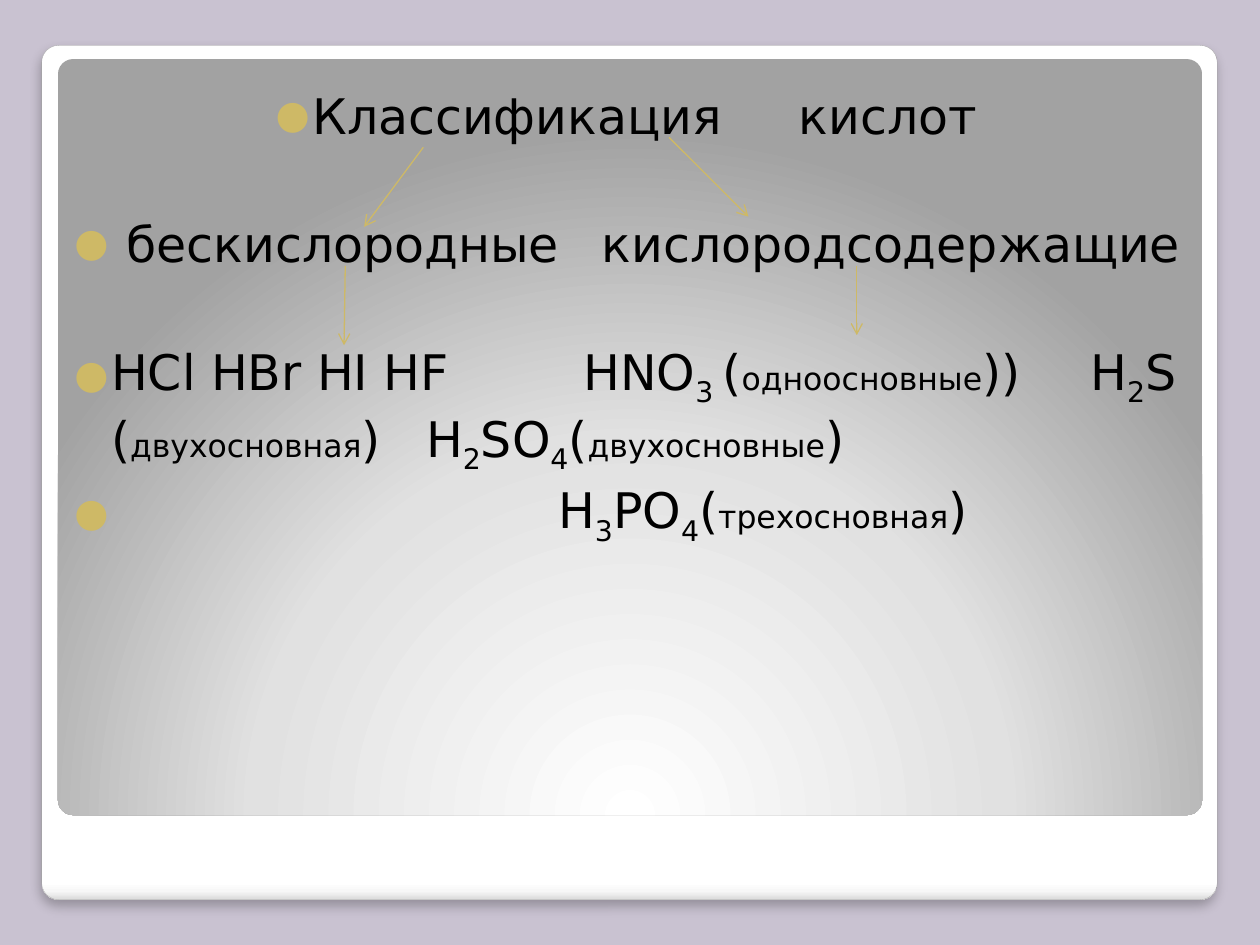
from dataclasses import dataclass

import pptx
import pptx.dml.color
import pptx.enum.shapes
import pptx.enum.text
import pptx.oxml
import pptx.oxml.ns
import pptx.util

Pt = pptx.util.Pt
COLORS = {"back": "C9C2D1", "edge": "A4A4A4", "shadow": "000000", "text": "000000", "accent": "CEB966"}
FONT = "DejaVu Sans"
NS = pptx.oxml.ns.nsdecls("a")
HANG = 21
BODY, SMALL = 28, 18


@dataclass
class Span:
    text: str
    size: int = BODY
    sub: bool = False


@dataclass
class Line:
    spans: list[Span]
    before: float
    left: float = HANG
    hang: float = HANG
    tabs: tuple[float, ...] = ()
    bullet: bool = True


@dataclass
class Panel:
    left: float
    top: float
    width: float
    height: float
    stops: list[tuple[int, str]]
    direction: str


@dataclass
class Arrow:
    x1: float
    y1: float
    x2: float
    y2: float


def sub(digit: str) -> Span:
    """Return a subscript span."""
    return Span(digit, sub=True)


def small(word: str) -> Span:
    """Return a span in the smaller size."""
    return Span(word, SMALL)


def rgb(name: str) -> pptx.dml.color.RGBColor:
    """Look up a named colour."""
    return pptx.dml.color.RGBColor.from_string(COLORS[name])


def add_xml(parent, xml: str) -> None:
    """Append one DrawingML element to a parent."""
    tag, rest = xml.split(" ", 1) if " " in xml.split(">", 1)[0] else (xml.split(">", 1)[0], None)
    name = tag.rstrip("/")
    tail = xml[len(name):]
    parent.append(pptx.oxml.parse_xml(f"{name} {NS}{tail}"))


def draw_panel(s, panel: Panel):
    """Draw a rounded panel with a gradient fill."""
    sp = s.shapes.add_shape(
        pptx.enum.shapes.MSO_SHAPE.ROUNDED_RECTANGLE,
        Pt(panel.left), Pt(panel.top), Pt(panel.width), Pt(panel.height))
    sp.adjustments[0] = 0.02
    sp.line.fill.background()
    stops = "".join(f'<a:gs pos="{pos * 1000}"><a:srgbClr val="{color}"/></a:gs>' for pos, color in panel.stops)
    add_xml(sp._element.spPr, f"<a:gradFill><a:gsLst>{stops}</a:gsLst>{panel.direction}</a:gradFill>")
    grad = sp._element.spPr[-1]
    sp._element.spPr.find(pptx.oxml.ns.qn("a:prstGeom")).addnext(grad)
    sp.shadow.inherit = False
    return sp


def draw_arrow(s, arrow: Arrow) -> None:
    """Draw a thin accent line with an open arrowhead."""
    c = s.shapes.add_connector(
        pptx.enum.shapes.MSO_CONNECTOR.STRAIGHT,
        Pt(arrow.x1), Pt(arrow.y1), Pt(arrow.x2), Pt(arrow.y2))
    c.line.color.rgb = rgb("accent")
    c.line.width = Pt(0.75)
    add_xml(c.line._get_or_add_ln(), '<a:tailEnd type="arrow"/>')
    add_xml(c._element.spPr, "<a:effectLst/>")


def write_line(p, line: Line) -> None:
    """Fill one paragraph with its spans, bullet and tab stops."""
    p.space_before = Pt(line.before)
    pPr = p._p.get_or_add_pPr()
    pPr.set("marL", str(Pt(line.left)))
    pPr.set("indent", str(-Pt(line.hang)))
    if line.bullet:
        add_xml(pPr, f'<a:buClr><a:srgbClr val="{COLORS["accent"]}"/></a:buClr>')
        add_xml(pPr, '<a:buSzPct val="80000"/>')
        add_xml(pPr, f'<a:buFont typeface="{FONT}"/>')
        add_xml(pPr, '<a:buChar char="●"/>')
    else:
        add_xml(pPr, "<a:buNone/>")
    if line.tabs:
        stops = "".join(f'<a:tab pos="{Pt(tab)}" algn="l"/>' for tab in line.tabs)
        add_xml(pPr, f"<a:tabLst>{stops}</a:tabLst>")
    for span in line.spans:
        r = p.add_run()
        r.text = span.text
        r.font.name = FONT
        r.font.size = Pt(span.size)
        r.font.color.rgb = rgb("text")
        if span.sub:
            r._r.get_or_add_rPr().set("baseline", "-25000")


def draw_body(s, lines: list[Line]) -> None:
    """Draw the text of the slide."""
    sp = s.shapes.add_textbox(Pt(28.1), Pt(41.8), Pt(656), Pt(430.6))
    tf = sp.text_frame
    tf.word_wrap = True
    tf.vertical_anchor = pptx.enum.text.MSO_ANCHOR.TOP
    tf.margin_left, tf.margin_top = Pt(14.4), Pt(7.2)
    tf.margin_right, tf.margin_bottom = Pt(0), Pt(3.6)
    for i, line in enumerate(lines):
        write_line(tf.add_paragraph() if i else tf.paragraphs[0], line)


CARD = Panel(23.8, 25.9, 671.8, 488.2,
             [(0, "FFFFFF"), (98, "FFFFFF"), (99, "F7F7F7"), (100, "DADADA")],
             '<a:lin ang="5400000" scaled="0"/>')
INNER = Panel(33.1, 33.8, 653.8, 432,
              [(0, "FFFFFF"), (55, "E1E1E1"), (100, "A2A2A2")],
              '<a:path path="circle"><a:fillToRect l="50000" t="175000" r="50000" b="-75000"/></a:path>')
LINES = [
    Line([Span("Классификация\tкислот")], 2.5, left=136, tabs=(414,)),
    Line([Span("бескислородные\tкислородсодержащие")], 39.5, left=29.9, hang=29.9, tabs=(301.5,)),
    Line([Span("HCl HBr HI HF\tHNO"), sub("3 "), Span("("), small("одноосновные"),
          Span("))\tH"), sub("2"), Span("S")], 39.5, tabs=(291, 580.5)),
    Line([Span("("), small("двухосновная"), Span(")\tH"), sub("2"), Span("SO"), sub("4"),
          Span("("), small("двухосновные"), Span(")")], 0, hang=0, tabs=(235,), bullet=False),
    Line([Span("H"), sub("3"), Span("PO"), sub("4"), Span("("), small("трехосновная"), Span(")")],
         2.5, left=276.5, hang=276.5),
]
ARROWS = [
    Arrow(197.3, 151.9, 196.6, 197.3),
    Arrow(489.6, 151.9, 489.6, 191.5),
    Arrow(241.9, 84.2, 208.1, 129.6),
    Arrow(382.3, 78.5, 427.7, 123.8),
]


def main() -> None:
    """Build the slide and save it."""
    prs = pptx.Presentation()
    prs.slide_width, prs.slide_height = Pt(720), Pt(540)
    s = prs.slides.add_slide(prs.slide_layouts[6])
    s.background.fill.solid()
    s.background.fill.fore_color.rgb = rgb("back")
    card = draw_panel(s, CARD)
    card.line.color.rgb = rgb("edge")
    card.line.width = Pt(0.16)
    card._element.spPr.remove(card._element.spPr.find(pptx.oxml.ns.qn("a:effectLst")))
    add_xml(card._element.spPr,
            f'<a:effectLst><a:outerShdw blurRad="{Pt(6)}" dist="{Pt(4)}" dir="5400000" algn="t" rotWithShape="0">'
            f'<a:srgbClr val="{COLORS["shadow"]}"><a:alpha val="25000"/></a:srgbClr></a:outerShdw></a:effectLst>')
    draw_panel(s, INNER)
    draw_body(s, LINES)
    for arrow in ARROWS:
        draw_arrow(s, arrow)
    prs.save("out.pptx")


if __name__ == "__main__":
    main()
